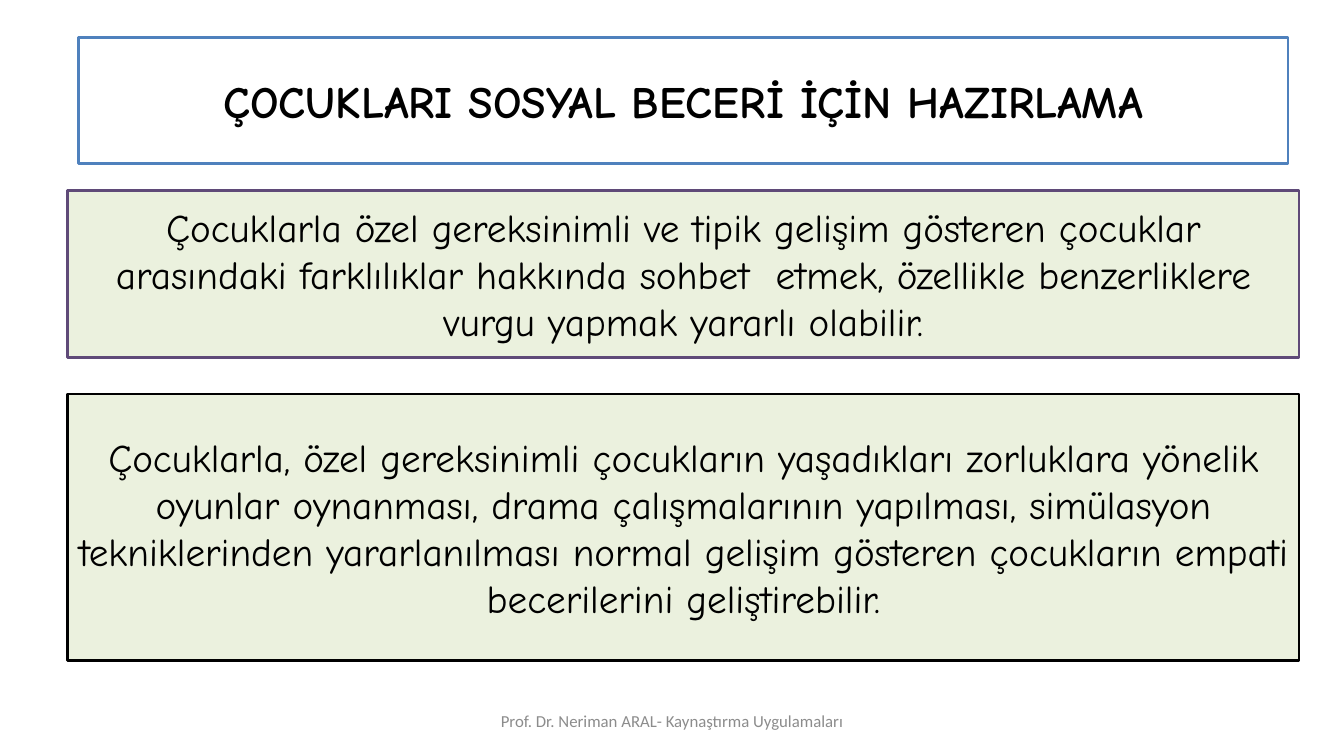
from dataclasses import dataclass
from typing import Optional

from pptx import Presentation
from pptx.dml.color import RGBColor
from pptx.enum.shapes import MSO_SHAPE
from pptx.enum.text import MSO_ANCHOR, MSO_AUTO_SIZE, PP_ALIGN
from pptx.shapes.autoshape import Shape
from pptx.slide import Slide
from pptx.util import Cm, Pt

WHITE = RGBColor(0xFF, 0xFF, 0xFF)
BLACK = RGBColor(0x00, 0x00, 0x00)
GRAY = RGBColor(0x8C, 0x8C, 0x8C)
BLUE = RGBColor(0x4F, 0x81, 0xBD)
PURPLE = RGBColor(0x5F, 0x4A, 0x78)
PALE_GREEN = RGBColor(0xEB, 0xF1, 0xDE)

HAND_FONT = "Comic Neue"
FOOTER_FONT = "Calibri"
PANEL_LEFT = 1.7
PANEL_WIDTH = 31.04


@dataclass(frozen=True)
class TextStyle:
    font: str
    size: int
    color: RGBColor
    bold: bool = False


@dataclass(frozen=True)
class Panel:
    top: float
    height: float
    border: RGBColor
    text: str


TITLE_STYLE = TextStyle(HAND_FONT, 32, BLACK, True)
PANEL_STYLE = TextStyle(HAND_FONT, 28, BLACK)
FOOTER_STYLE = TextStyle(FOOTER_FONT, 12, GRAY)

PANELS = (
    Panel(4.8, 4.22, PURPLE,
          "Çocuklarla özel gereksinimli ve tipik gelişim gösteren çocuklar "
          "arasındaki farklılıklar hakkında sohbet  etmek, özellikle "
          "benzerliklere vurgu yapmak yararlı olabilir."),
    Panel(9.93, 6.71, BLACK,
          "Çocuklarla, özel gereksinimli çocukların yaşadıkları zorluklara "
          "yönelik oyunlar oynanması, drama çalışmalarının yapılması, "
          "simülasyon tekniklerinden yararlanılması normal gelişim gösteren "
          "çocukların empati becerilerini geliştirebilir."),
)


def write_text(box: Shape, text: str, style: TextStyle) -> None:
    frame = box.text_frame
    frame.text = text
    frame.word_wrap = True
    frame.auto_size = MSO_AUTO_SIZE.NONE
    frame.vertical_anchor = MSO_ANCHOR.MIDDLE
    frame.margin_left = frame.margin_right = Cm(0.2)
    para = frame.paragraphs[0]
    para.alignment = PP_ALIGN.CENTER
    for span in para.runs:
        span.font.name = style.font
        span.font.size = Pt(style.size)
        span.font.bold = style.bold
        span.font.color.rgb = style.color


def paint_box(box: Shape, fill: RGBColor, border: Optional[RGBColor]) -> None:
    box.fill.solid()
    box.fill.fore_color.rgb = fill
    box.line.color.rgb = border
    box.line.width = Pt(2)


def add_title(page: Slide, text: str) -> None:
    title = page.shapes.title
    title.left, title.top = Cm(1.98), Cm(0.94)
    title.width, title.height = Cm(30.48), Cm(3.18)
    paint_box(title, WHITE, BLUE)
    write_text(title, text, TITLE_STYLE)


def add_panel(page: Slide, panel: Panel) -> None:
    box = page.shapes.add_shape(
        MSO_SHAPE.RECTANGLE,
        Cm(PANEL_LEFT), Cm(panel.top), Cm(PANEL_WIDTH), Cm(panel.height),
    )
    box.shadow.inherit = False
    paint_box(box, PALE_GREEN, panel.border)
    write_text(box, panel.text, PANEL_STYLE)


def add_footer(page: Slide, text: str) -> None:
    box = page.shapes.add_textbox(Cm(11.58), Cm(17.65), Cm(10.72), Cm(1.02))
    write_text(box, text, FOOTER_STYLE)


def main() -> None:
    deck = Presentation()
    deck.slide_width, deck.slide_height = Cm(33.87), Cm(19.05)
    page = deck.slides.add_slide(deck.slide_layouts.get_by_name("Title Only"))
    add_title(page, "ÇOCUKLARI SOSYAL BECERİ İÇİN HAZIRLAMA")
    add_footer(page, "Prof. Dr. Neriman ARAL- Kaynaştırma Uygulamaları")
    for panel in PANELS:
        add_panel(page, panel)
    deck.save("out.pptx")


if __name__ == "__main__":
    main()
